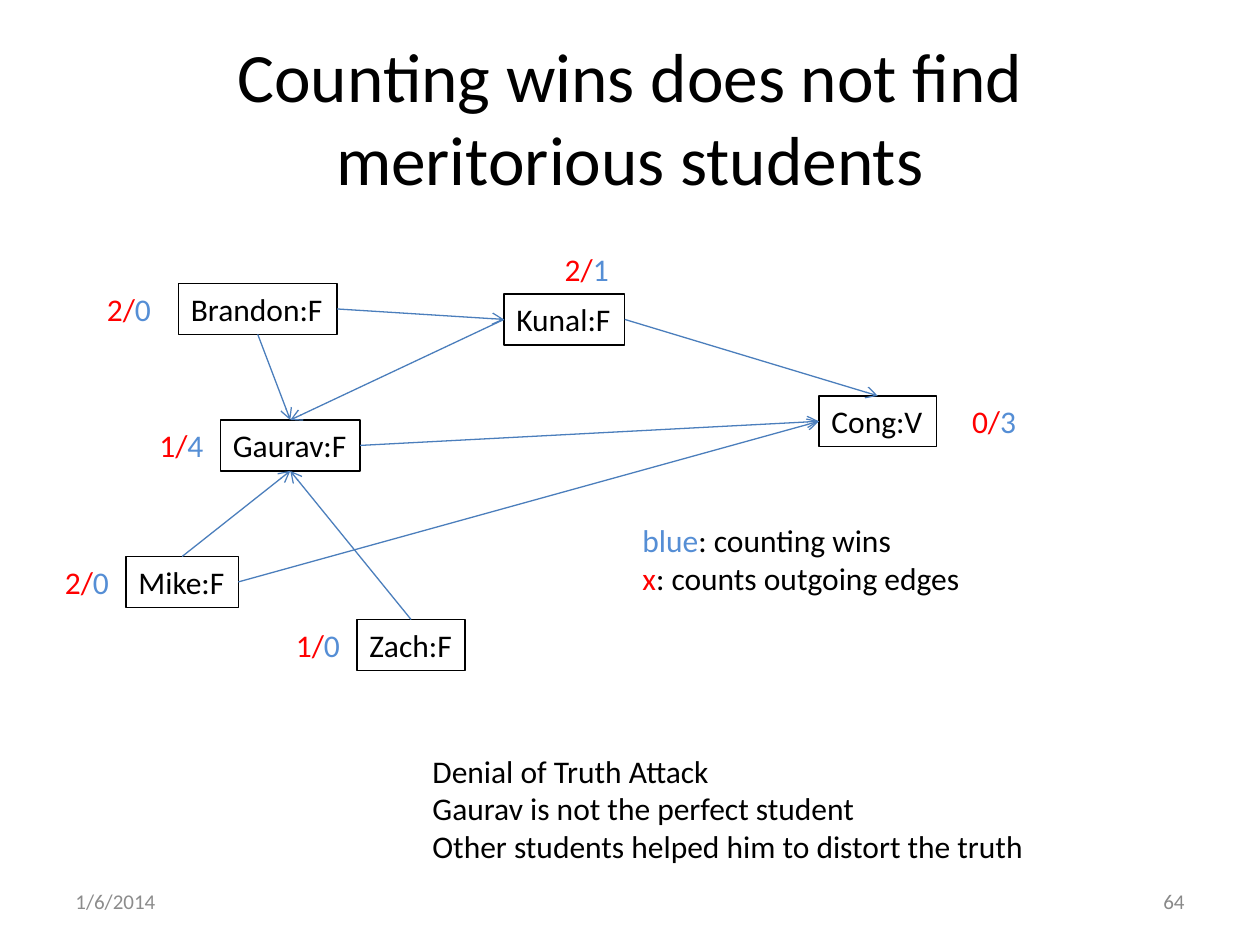
from lxml.etree import SubElement
from pptx import Presentation
from pptx.dml.color import RGBColor
from pptx.enum.shapes import MSO_CONNECTOR, MSO_SHAPE
from pptx.enum.text import MSO_ANCHOR, PP_ALIGN
from pptx.oxml.ns import qn
from pptx.util import Inches, Pt

COLORS = {"black": "000000", "red": "FF0000", "blue": "558ED5",
          "edge": "4B7EBC", "date": "8C8C8C", "number": "898989"}
FONT = "Calibri"
COLUMNS, ROWS = 120, 90
LINE_HEIGHT = 4.85
SCORE_WIDTH = 6.7
TOP, LEFT, BOTTOM, RIGHT = range(4)

TITLE = "Counting wins does not find meritorious students"
STUDENTS = {
    "Gaurav": ("Gaurav:F", 21, 40, 13.3),
    "Kunal": ("Kunal:F", 48, 28, 11.5),
    "Cong": ("Cong:V", 78, 37.7, 11.2),
    "Brandon": ("Brandon:F", 17, 27, 15.1),
    "Mike": ("Mike:F", 12, 53, 10.7),
    "Zach": ("Zach:F", 34, 59, 10.3),
}
SCORES = [
    ("2/", "1", 52.6, 23.2),
    ("1/", "4", 14, 40),
    ("0/", "3", 91.4, 37.7),
    ("2/", "0", 9, 27),
    ("2/", "0", 5, 53),
    ("1/", "0", 27, 59),
]
EDGES = [
    ("Kunal", RIGHT, "Cong", TOP),
    ("Gaurav", RIGHT, "Cong", LEFT),
    ("Kunal", LEFT, "Gaurav", TOP),
    ("Brandon", BOTTOM, "Gaurav", TOP),
    ("Mike", TOP, "Gaurav", BOTTOM),
    ("Zach", TOP, "Gaurav", BOTTOM),
    ("Mike", RIGHT, "Cong", LEFT),
    ("Brandon", RIGHT, "Kunal", LEFT),
]
LEGEND = [
    [("blue", "blue"), (": counting wins", "black")],
    [("x", "red"), (": counts outgoing edges", "black")],
]
CONCLUSION = [
    [("Denial of Truth Attack", "black")],
    [("Gaurav is not the perfect student", "black")],
    [("Other students helped him to distort the truth", "black")],
]

presentation = Presentation()
presentation.slide_width, presentation.slide_height = Inches(10), Inches(7.5)
slide = presentation.slides.add_slide(presentation.slide_layouts[6])


def grid_box(column, row, width, height):
    across = presentation.slide_width / COLUMNS
    down = presentation.slide_height / ROWS
    return [round(value) for value in
            (column * across, row * down, width * across, height * down)]


def write(shape, lines, size=18, align=PP_ALIGN.LEFT, anchor=MSO_ANCHOR.TOP, wrap=False):
    text_frame = shape.text_frame
    text_frame.word_wrap = wrap
    text_frame.vertical_anchor = anchor
    text_frame.text = "\n".join("" for _ in lines)
    for paragraph, pieces in zip(text_frame.paragraphs, lines):
        paragraph.alignment = align
        for text, color in pieces:
            run = paragraph.add_run()
            run.text = text
            run.font.name = FONT
            run.font.size = Pt(size)
            run.font.color.rgb = RGBColor.from_string(COLORS[color])


def add_text(box, lines, **style):
    write(slide.shapes.add_textbox(*grid_box(*box)), lines, **style)


def add_student(label, column, row, width):
    shape = slide.shapes.add_shape(
        MSO_SHAPE.RECTANGLE, *grid_box(column, row, width, LINE_HEIGHT))
    shape.shadow.inherit = False
    shape.fill.background()
    shape.line.color.rgb = RGBColor.from_string(COLORS["black"])
    shape.line.width = Pt(0.75)
    write(shape, [[(label, "black")]])
    return shape


def add_edge(start, start_side, end, end_side):
    connector = slide.shapes.add_connector(MSO_CONNECTOR.STRAIGHT, 0, 0, 0, 0)
    connector.begin_connect(start, start_side)
    connector.end_connect(end, end_side)
    connector.line.color.rgb = RGBColor.from_string(COLORS["edge"])
    connector.line.width = Pt(0.75)
    SubElement(connector.line._get_or_add_ln(), qn("a:tailEnd"), type="arrow")
    SubElement(connector._element.spPr, qn("a:effectLst"))


add_text((6, 3.6, 108, 15), [[(TITLE, "black")]], size=39.6,
         align=PP_ALIGN.CENTER, anchor=MSO_ANCHOR.MIDDLE, wrap=True)

boxes = {name: add_student(*student) for name, student in STUDENTS.items()}
for start, start_side, end, end_side in EDGES:
    add_edge(boxes[start], start_side, boxes[end], end_side)

for outgoing, wins, column, row in SCORES:
    add_text((column, row, SCORE_WIDTH, LINE_HEIGHT), [[(outgoing, "red"), (wins, "blue")]])

add_text((60, 49, 33, 8.5), LEGEND)
add_text((40, 71, 59.4, 12.1), CONCLUSION)

for text, color, column, align in [("1/6/2014", "date", 6, PP_ALIGN.LEFT),
                                   ("64", "number", 86, PP_ALIGN.RIGHT)]:
    add_text((column, 83.4, 28, 4.8), [[(text, color)]], size=12,
             align=align, anchor=MSO_ANCHOR.MIDDLE, wrap=True)

presentation.save("out.pptx")
